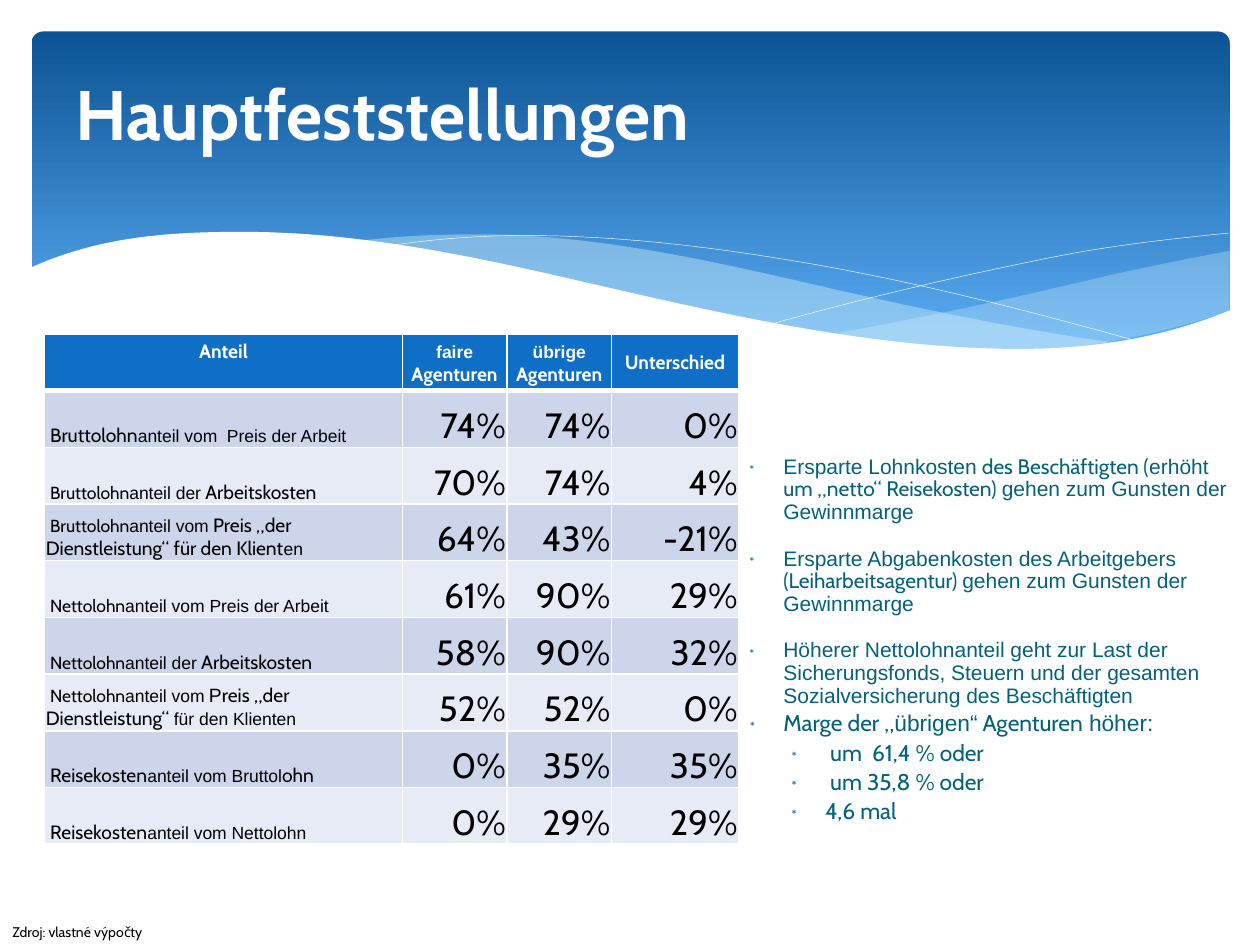
from itertools import cycle

from lxml import etree
from pptx import Presentation
from pptx.dml.color import RGBColor
from pptx.enum import shapes, text
from pptx.oxml.ns import qn
from pptx.util import Pt

ARIAL, CABIN = "Arial", "Cabin"
WHITE, BLACK, BLUE, TEAL, PALE = "FFFFFF", "000000", "0F6FC6", "04617B", "DBF5F9"
BANDS = ("CCD5EA", "E7EBF5")
LEFT, CENTER, RIGHT = text.PP_ALIGN.LEFT, text.PP_ALIGN.CENTER, text.PP_ALIGN.RIGHT
TOP, MIDDLE, BOTTOM = text.MSO_ANCHOR.TOP, text.MSO_ANCHOR.MIDDLE, text.MSO_ANCHOR.BOTTOM

# Each curve is a few knots (x, y, slope), measured from the banner's top left corner
WHITE_EDGE = [(-1.4, 135.4, -0.46), (121, 114.5, 0), (303.8, 140.4, 0.23),
              (564.5, 181.4, 0), (685.4, 159.1, -0.41)]
LONG_WAVE = ([(187.9, 119.5, -0.12), (255.6, 115.9, 0), (434.9, 141.8, 0.23), (625, 178.6, 0.13)],
             [(187.9, 119.5, 0.12), (305.3, 141.8, 0.24), (555.1, 182.2, 0), (625, 178.6, -0.1)])
SHORT_WAVE = ([(457.9, 172.8, -0.18), (601.9, 142.6, -0.24), (684.7, 125.3, -0.19)],
              [(457.9, 172.8, 0.15), (560.2, 182.2, 0), (684.7, 159.8, -0.33)])
FALLING_LINE = [(204.5, 122.4, -0.15), (281.5, 116.6, 0), (439.9, 131.8, 0.17), (635, 177.8, 0.28)]
RISING_LINE = [(423.4, 167, -0.28), (583.9, 128.9, -0.2), (684, 115.2, -0.1)]
WHITE_BASE = 218.9

# Text is a list of runs: (words, font, size)
MAIN, MINOR, PLAIN = (CABIN, 11), (CABIN, 10), (ARIAL, 10)


def alternate(size, fonts, *parts):
    """Runs of one size whose fonts take turns."""
    return [(words, font, size) for words, font in zip(parts, cycle(fonts))]


def wage_label(wage, rest):
    return [(" ", *MAIN), (wage, *MINOR), (rest, *PLAIN)]


def agency_header(kind):
    return [(kind, *PLAIN), (" Agenturen", *MAIN)]


LABOUR_COST = (" Arbeitskosten", *MAIN)
TRAVEL = (" Reisekosten", *MAIN)
HEADERS = [[("Anteil", *MAIN)], agency_header("faire"), agency_header("übrige"),
           [("Unterschied", *MAIN)]]
ROWS = [
    ([(" Bruttolohn", *MAIN), ("anteil vom  Preis der Arbeit", *PLAIN)], "74%", "74%", "0%"),
    (wage_label("Bruttolohn", "anteil der") + [LABOUR_COST], "70%", "74%", "4%"),
    (wage_label("Bruttolohn", "anteil vom")
     + [(" Preis „der Dienstleistung“ für den Klient", *MAIN), ("en", *PLAIN)],
     "64%", "43%", "-21%"),
    (wage_label("Nettolohn", "anteil vom Preis der Arbeit"), "61%", "90%", "29%"),
    (wage_label("Nettolohn", "anteil der") + [LABOUR_COST], "58%", "90%", "32%"),
    (wage_label("Nettolohn", "anteil vom")
     + [(" ", *MAIN), ("P", ARIAL, 11), ("reis „der Dienstleistung“ ", *MAIN),
        ("für den Klienten", *PLAIN)], "52%", "52%", "0%"),
    ([TRAVEL, ("anteil vom Bruttol", *PLAIN), ("ohn", *MAIN)], "0%", "35%", "35%"),
    ([TRAVEL, ("anteil vom Nettolohn", *PLAIN)], "0%", "29%", "29%"),
]
COLUMN_WIDTHS = (204.4, 59.8, 59.8, 72.7)

# (left indent, space before, runs)
INDENT, SUB_INDENT = 21.6, 45.4
GAP, TIGHT = 13.6, 2.6
TO_MARGIN = "gehen zum Gunsten der Gewinnmarge"
FINDINGS = [
    (INDENT, 0, alternate(12, (ARIAL, CABIN), "Ersparte Lohnkosten", " des Beschäftigten (",
                          "erhöht", " um „netto“ Reisekosten) ", TO_MARGIN)),
    (INDENT, GAP, alternate(12, (ARIAL, CABIN), "Ersparte Abgabenkosten des Arbeitgebers ",
                            " (Leiharbeitsagentur) ", TO_MARGIN)),
    (INDENT, GAP, alternate(12, (ARIAL,), "Höherer Nettolohnanteil geht zur Last der "
                            "Sicherungsfonds, Steuern und der gesamten Sozialversicherung "
                            "des Beschäftigten")),
    (INDENT, TIGHT, alternate(13, (CABIN, ARIAL), "Marge der „", "übrigen“", " Agenturen",
                              " höher:")),
    *((SUB_INDENT, TIGHT, alternate(13, (CABIN,), words))
      for words in (" um  61,4 % oder", " um 35,8 % oder", "4,6 mal")),
]


def rgb(color):
    return RGBColor.from_string(color)


def apply(target, **values):
    for name, value in values.items():
        setattr(target, name, value)


def fill_solid(target, color):
    target.fill.solid()
    target.fill.fore_color.rgb = rgb(color)


def add_runs(p, runs, color, bold=False):
    for words, font, size in runs:
        r = p.add_run()
        r.text = words
        apply(r.font, name=font, size=Pt(size), bold=bold)
        r.font.color.rgb = rgb(color)


def add_textbox(s, box, **frame):
    tf = s.shapes.add_textbox(*map(Pt, box)).text_frame
    apply(tf, word_wrap=True, **frame)
    return tf


def curve(knots, steps=24):
    """Points on the cubic Hermite curve through the knots."""
    points = [knots[0][:2]]
    for (x0, y0, m0), (x1, y1, m1) in zip(knots, knots[1:]):
        width = x1 - x0
        for t in (i / steps for i in range(1, steps + 1)):
            blend = t * t * (3 - 2 * t)
            bend = t * (1 - t) * (m0 * (1 - t) - m1 * t)
            points.append((x0 + t * width, y0 + blend * (y1 - y0) + bend * width))
    return points


def add_outline(s, box, points, closed):
    """Freeform without fill or shadow; points are relative to the box."""
    units = 100  # per point, so that curves stay smooth
    (x, y), *rest = [(px * units, py * units) for px, py in points]
    builder = s.shapes.build_freeform(x, y, scale=Pt(1) / units)
    builder.add_line_segments(rest, close=closed)
    sp = builder.convert_to_shape(Pt(box[0]), Pt(box[1]))
    sp.shadow.inherit = False
    sp.fill.background()
    return sp


def add_wave_area(s, box, points, color, alpha=100):
    sp = add_outline(s, box, points, closed=True)
    fill_solid(sp, color)
    sp.line.fill.background()
    clr = sp._element.spPr.find(qn("a:solidFill"))[0]
    etree.SubElement(clr, qn("a:alpha"), val=str(alpha * 1000))


def add_wave_line(s, box, knots):
    sp = add_outline(s, box, curve(knots), closed=False)
    sp.line.color.rgb = rgb(WHITE)
    sp.line.width = Pt(0.25)


def add_banner(s, box):
    sp = s.shapes.add_shape(shapes.MSO_SHAPE.ROUNDED_RECTANGLE, *map(Pt, box))
    sp.adjustments[0] = 0.034
    sp.shadow.inherit = False
    sp.line.fill.background()
    sp.fill.gradient()
    sp.fill.gradient_angle = 270
    for stop, position, color in zip(sp.fill.gradient_stops, (0, 0.9), ("0B5394", "59AAF2")):
        stop.position = position
        stop.color.rgb = rgb(color)
    for (upper, lower), alpha in ((SHORT_WAVE, 29), (LONG_WAVE, 40)):
        add_wave_area(s, box, curve(upper) + curve(lower)[::-1], PALE, alpha)
    for knots in (FALLING_LINE, RISING_LINE):
        add_wave_line(s, box, knots)
    base = [(WHITE_EDGE[end][0], WHITE_BASE) for end in (-1, 0)]
    add_wave_area(s, box, curve(WHITE_EDGE) + base, WHITE)


def add_title(s, box):
    tf = add_textbox(s, box, vertical_anchor=MIDDLE, margin_bottom=Pt(26.4))
    add_runs(tf.paragraphs[0], [("Hauptfeststellungen", CABIN, 40)], WHITE, bold=True)


def set_borders(cell, **widths):
    """White borders of 1 point, or of the width given for a side (L, R, T, B)."""
    tc_pr = cell._tc.get_or_add_tcPr()
    for i, side in enumerate("LRTB"):
        ln = etree.Element(qn(f"a:ln{side}"), w=str(Pt(widths.get(side, 1))))
        fill = etree.SubElement(ln, qn("a:solidFill"))
        etree.SubElement(fill, qn("a:srgbClr"), val=WHITE)
        tc_pr.insert(i, ln)


def fill_cell(cell, runs, fill, color, align, anchor, bold=False, **borders):
    fill_solid(cell, fill)
    apply(cell, vertical_anchor=anchor, margin_left=Pt(0.7), margin_right=Pt(0.7),
          margin_top=Pt(0.7), margin_bottom=0)
    p = cell.text_frame.paragraphs[0]
    p.alignment = align
    add_runs(p, runs, color, bold)
    set_borders(cell, **borders)


def add_share_table(s, box):
    table = s.shapes.add_table(len(ROWS) + 1, len(HEADERS), *map(Pt, box)).table
    for column, width in zip(table.columns, COLUMN_WIDTHS):
        column.width = Pt(width)
    for row in table.rows:
        row.height = Pt(box[3] / len(table.rows))
    for c, runs in enumerate(HEADERS):
        fill_cell(table.cell(0, c), runs, BLUE, WHITE, CENTER, MIDDLE, bold=True, B=3)
    apply(table.cell(0, 0), vertical_anchor=TOP, margin_top=Pt(3.6))
    for r, (label, *shares) in enumerate(ROWS, 1):
        for c, runs in enumerate([label] + [[(share, CABIN, 20)] for share in shares]):
            fill_cell(table.cell(r, c), runs, BANDS[(r - 1) % 2], BLACK,
                      RIGHT if c else LEFT, BOTTOM, T=3 if r == 1 else 1)


def add_bullet(p, left):
    p_pr = p._p.get_or_add_pPr()
    p_pr.set("marL", str(Pt(left)))
    p_pr.set("indent", str(-Pt(INDENT)))
    color = etree.SubElement(p_pr, qn("a:buClr"))
    etree.SubElement(color, qn("a:srgbClr"), val=BLUE)
    etree.SubElement(p_pr, qn("a:buSzPct"), val="60000")
    etree.SubElement(p_pr, qn("a:buFont"), typeface=ARIAL)
    etree.SubElement(p_pr, qn("a:buChar"), char="∗")


def add_findings(s, box):
    tf = add_textbox(s, box, margin_top=Pt(64))
    for i, (left, space, runs) in enumerate(FINDINGS):
        p = tf.add_paragraph() if i else tf.paragraphs[0]
        apply(p, line_spacing=0.9, space_before=Pt(space))
        add_bullet(p, left)
        add_runs(p, runs, TEAL)


def add_source_note(s, box):
    tf = add_textbox(s, box)
    add_runs(tf.paragraphs[0], [("Zdroj: vlastné výpočty", CABIN, 8)], BLACK)


def main():
    prs = Presentation()
    apply(prs, slide_width=Pt(720), slide_height=Pt(540))
    s = prs.slides.add_slide(prs.slide_layouts[6])
    add_banner(s, (18, 18, 684.7, 194.4))
    add_title(s, (36, 26.6, 648, 98.6))
    add_findings(s, (419, 196.6, 292.3, 317.5))
    add_share_table(s, (25.5, 190.8, sum(COLUMN_WIDTHS), 291.6))
    add_source_note(s, (0, 524.2, 147.6, 16.6))
    prs.save("out.pptx")


if __name__ == "__main__":
    main()
